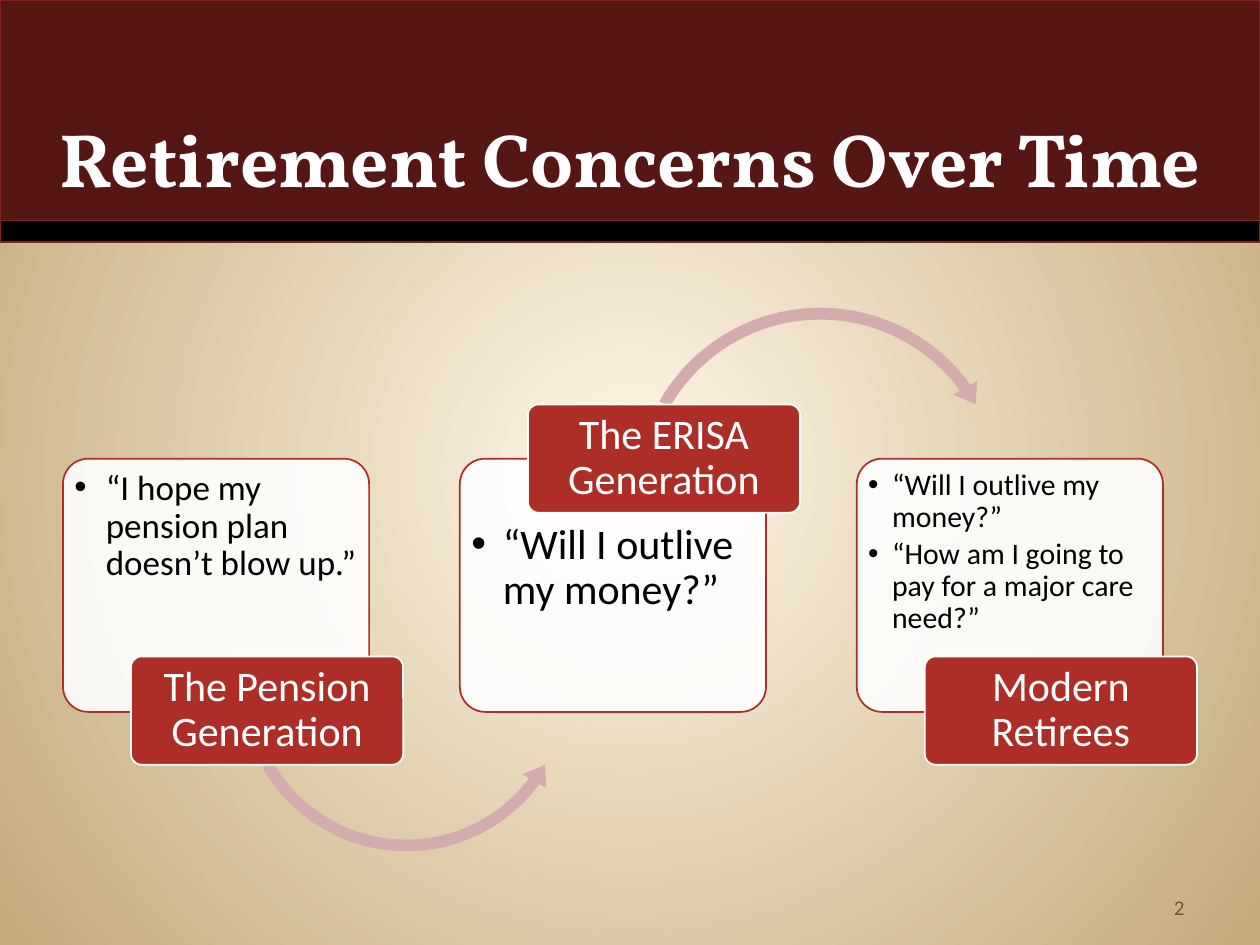
from lxml import etree
from pptx import Presentation
from pptx.dml.color import RGBColor
from pptx.enum.shapes import MSO_SHAPE
from pptx.enum.text import MSO_ANCHOR, MSO_AUTO_SIZE, PP_ALIGN
from pptx.oxml.ns import qn
from pptx.util import Inches, Pt

RECT, ROUND = MSO_SHAPE.RECTANGLE, MSO_SHAPE.ROUNDED_RECTANGLE
ARROW_UP, ARROW_DOWN = MSO_SHAPE.LEFT_CIRCULAR_ARROW, MSO_SHAPE.CIRCULAR_ARROW
TOP, MIDDLE, BOTTOM = MSO_ANCHOR.TOP, MSO_ANCHOR.MIDDLE, MSO_ANCHOR.BOTTOM
LEFT, CENTER, RIGHT = PP_ALIGN.LEFT, PP_ALIGN.CENTER, PP_ALIGN.RIGHT

THEME = {
    "glow": "FFF7E8", "sand": "C4AA7A", "maroon": "561714", "edge": "80221D",
    "red": "AD2E27", "rose": "D3ADAD", "brown": "795339",
    "white": "FFFFFF", "black": "000000",
    "heading": "Vollkorn", "text": "Calibri",
    "title_size": 43.2, "label_size": 24, "number_size": 12,
}

# Three columns: card, list and label keep the same offsets in each
COL_LEFT, COL_PITCH = 0.5, 3.15
CARD_TOP, CARD_W, CARD_H = 3.64, 2.43, 2.01
LABEL_SHIFT, LABEL_W, LABEL_H = 0.54, 2.16, 0.86
LABEL_LOW, LABEL_HIGH = 5.21, 3.21
LIST_SHIFT, LIST_W, LIST_H = 0.05, 2.34, 1.48
LIST_HIGH, LIST_LOW = 3.69, 4.11

# label, label top, list top, list size, indent, items, arrow to next column
columns = [
    ("The Pension Generation", LABEL_LOW, LIST_HIGH, 20, 0.25,
     ["“I hope my pension plan doesn’t blow up.”"],
     (ARROW_UP, 1.85, 4.07, 2.75, [0.034, 4.226, 21.981, 90.245, 0.04])),
    ("The ERISA Generation", LABEL_HIGH, LIST_LOW, 24, 0.25,
     ["“Will I outlive my money?”"],
     (ARROW_DOWN, 4.98, 2.38, 3.06, [0.031, 3.766, 194.479, 125.755, 0.036])),
    ("Modern Retirees", LABEL_LOW, LIST_HIGH, 17, 0.19,
     ["“Will I outlive my money?”",
      "“How am I going to pay for a major care need?”"], None),
]


def add_box(kind, left, top, width, height, fill, line=None):
    sp = s.shapes.add_shape(kind, *map(Inches, (left, top, width, height)))
    sp.shadow.inherit = False
    sp.fill.solid()
    sp.fill.fore_color.rgb = RGBColor.from_string(THEME[fill])
    if line:
        sp.line.color.rgb = RGBColor.from_string(THEME[line])
        sp.line.width = Pt(1)
    else:
        sp.line.fill.background()
    return sp


def write(sp, text, size, color, font="text", align=LEFT, anchor=TOP,
          inset=(0.1, 0.05), spacing=1.0, after=0, bold=False):
    tf = sp.text_frame
    tf.text = text
    tf.word_wrap, tf.auto_size, tf.vertical_anchor = True, MSO_AUTO_SIZE.NONE, anchor
    tf.margin_left = tf.margin_right = Inches(inset[0])
    tf.margin_top = tf.margin_bottom = Inches(inset[1])
    for p in tf.paragraphs:
        p.alignment, p.line_spacing = align, spacing
        p.space_before, p.space_after = Pt(0), Pt(after)
        for r in p.runs:
            r.font.name, r.font.size, r.font.bold = THEME[font], Pt(size), bold
            r.font.color.rgb = RGBColor.from_string(THEME[color])


prs = Presentation()
prs.slide_width, prs.slide_height = Inches(10), Inches(7.5)
s = prs.slides.add_slide(prs.slide_layouts[4])
title, *bodies = s.placeholders
spare = bodies.pop()
spare.element.getparent().remove(spare.element)

# Background: glow from the centre
fill = s.background.fill
fill.gradient()
for stop, name in zip(fill.gradient_stops, ("glow", "sand")):
    stop.color.rgb = RGBColor.from_string(THEME[name])
fill.gradient_stops[0].position, fill.gradient_stops[1].position = 0, 1
lin = next(s.element.iter(qn("a:lin")))
path = etree.Element(qn("a:path"), path="circle")
etree.SubElement(path, qn("a:fillToRect"), l="50000", t="50000", r="50000", b="50000")
lin.getparent().replace(lin, path)

# Header band and title
add_box(RECT, 0, 1.67, 10, 0.25, "black", "edge")
add_box(RECT, 0, 0, 10, 1.75, "maroon", "edge")
title.left, title.top, title.width, title.height = map(Inches, (0.21, 0.08, 9.58, 1.58))
write(title, "Retirement Concerns Over Time", THEME["title_size"], "white",
      font="heading", align=CENTER, anchor=BOTTOM, bold=True)
s.shapes.element.append(title.element)

# Slide number
number = s.shapes.add_textbox(*map(Inches, (7.17, 6.83, 2.33, 0.52)))
write(number, "2", THEME["number_size"], "brown", align=RIGHT, anchor=BOTTOM)

# Generations
for i, (name, label_top, list_top, size, indent, items, arrow) in enumerate(columns):
    x = COL_LEFT + i * COL_PITCH

    card = add_box(ROUND, x, CARD_TOP, CARD_W, CARD_H, "white", "red")
    card.adjustments[0] = 0.1
    color = card.fill._xPr.find(qn("a:solidFill"))[0]
    etree.SubElement(color, qn("a:alpha"), val="90000")

    # List, lifted above its card
    body = bodies[i]
    body.left, body.top, body.width, body.height = map(
        Inches, (x + LIST_SHIFT, list_top, LIST_W, LIST_H))
    write(body, "\n".join(items), size, "black", inset=(0.04, 0.04),
          spacing=0.9, after=size * 0.15)
    for p in body.text_frame.paragraphs:
        pPr = p._p.get_or_add_pPr()
        pPr.set("marL", str(Inches(indent)))
        pPr.set("indent", str(-Inches(indent)))
        etree.SubElement(pPr, qn("a:buChar"), char="•")
    s.shapes.element.append(body.element)

    if arrow:
        kind, left, top, side, adjustments = arrow
        arc = add_box(kind, left, top, side, side, "rose")
        for n, value in enumerate(adjustments):
            arc.adjustments[n] = value

    label = add_box(ROUND, x + LABEL_SHIFT, label_top, LABEL_W, LABEL_H, "red", "white")
    label.adjustments[0] = 0.1
    write(label, name, THEME["label_size"], "white", align=CENTER, anchor=MIDDLE,
          inset=(0.08, 0.05), spacing=0.9)

prs.save("out.pptx")
